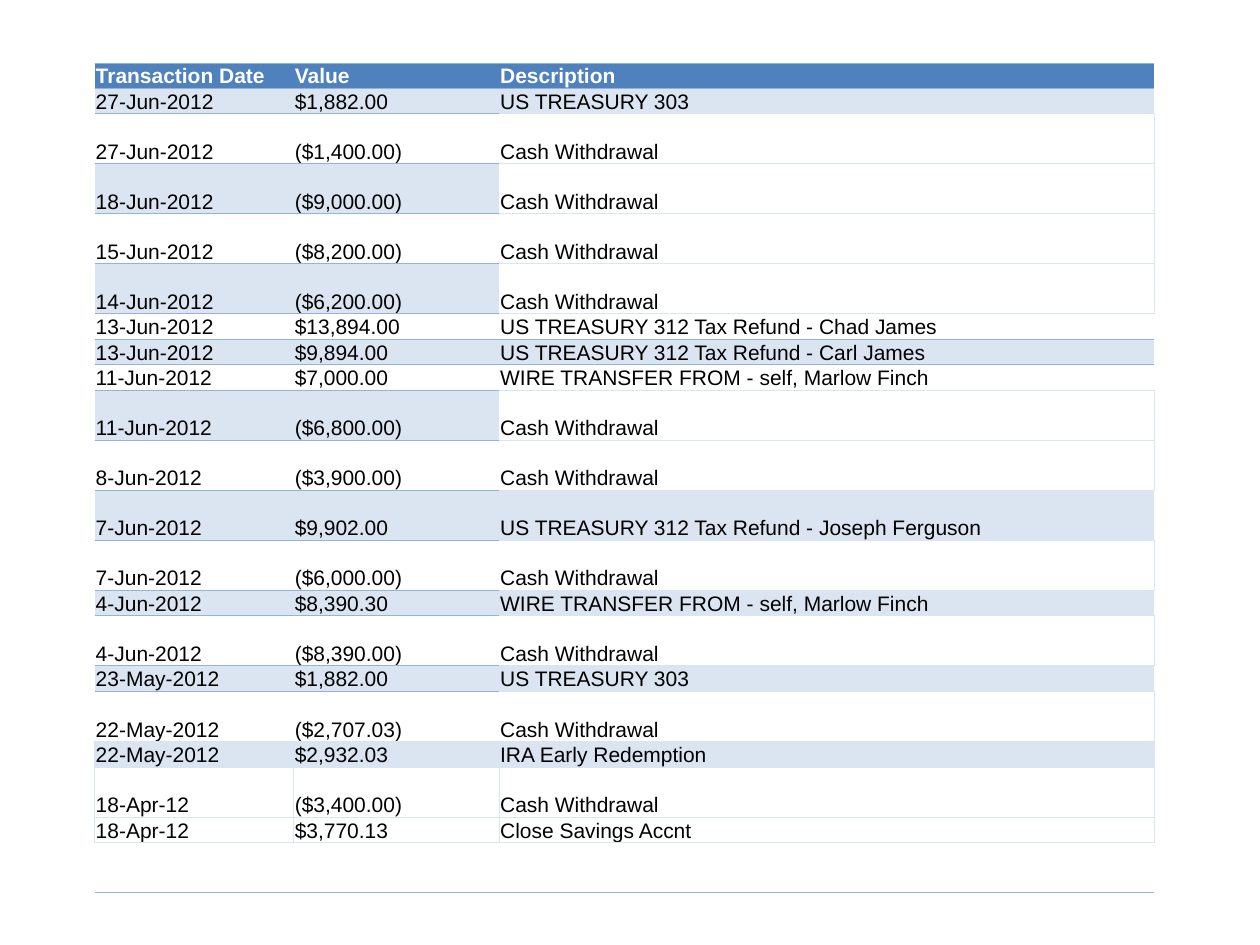
"""Build a slide with a ledger of dated bank transactions."""
import dataclasses
import typing

import lxml.etree
import pptx
import pptx.dml.color
import pptx.enum.text
import pptx.oxml.ns
import pptx.util


@dataclasses.dataclass(frozen=True)
class Theme:
    font: str = "Arial"
    text_size: float = 12
    border_width: float = 0.5
    header_fill: str = "4F81BD"
    header_text: str = "FFFFFF"
    body_text: str = "000000"
    band: str = "DBE5F1"
    plain: str = "FFFFFF"
    rule: str = "95B3D7"
    pale_rule: str = "DBE5F1"


@dataclasses.dataclass(frozen=True)
class Entry:
    date: str = ""
    value: str = ""
    description: str = ""
    height: float = 14.6
    boxed: bool = False
    banded: bool = False

    @property
    def texts(self) -> tuple[str, str, str]:
        return self.date, self.value, self.description

    @property
    def withdrawal(self) -> bool:
        return self.description == WITHDRAWAL


THEME = Theme()
SLIDE_WIDTH = pptx.util.Inches(10)
SLIDE_HEIGHT = pptx.util.Inches(7.5)
LEDGER_LEFT, LEDGER_TOP = 0.075, 0.067
COLUMN_SHARES = (0.158, 0.163, 0.52)
DESCRIPTION = 2
TALL = 28.6
WITHDRAWAL = "Cash Withdrawal"
WIRE = "WIRE TRANSFER FROM - self, Marlow Finch"
TREASURY = "US TREASURY 303"
REFUND = "US TREASURY 312 Tax Refund - "

HEADER = Entry("Transaction Date", "Value", "Description", height=13.7)
TRANSACTIONS = (
    ("27-Jun-2012", "$1,882.00", TREASURY),
    ("27-Jun-2012", "($1,400.00)", WITHDRAWAL),
    ("18-Jun-2012", "($9,000.00)", WITHDRAWAL),
    ("15-Jun-2012", "($8,200.00)", WITHDRAWAL),
    ("14-Jun-2012", "($6,200.00)", WITHDRAWAL),
    ("13-Jun-2012", "$13,894.00", REFUND + "Chad James"),
    ("13-Jun-2012", "$9,894.00", REFUND + "Carl James"),
    ("11-Jun-2012", "$7,000.00", WIRE),
    ("11-Jun-2012", "($6,800.00)", WITHDRAWAL),
    ("8-Jun-2012", "($3,900.00)", WITHDRAWAL),
    ("7-Jun-2012", "$9,902.00", REFUND + "Joseph Ferguson"),
    ("7-Jun-2012", "($6,000.00)", WITHDRAWAL),
    ("4-Jun-2012", "$8,390.30", WIRE),
    ("4-Jun-2012", "($8,390.00)", WITHDRAWAL),
    ("23-May-2012", "$1,882.00", TREASURY),
    ("22-May-2012", "($2,707.03)", WITHDRAWAL),
    ("22-May-2012", "$2,932.03", "IRA Early Redemption"),
    ("18-Apr-12", "($3,400.00)", WITHDRAWAL),
    ("18-Apr-12", "$3,770.13", "Close Savings Accnt"),
)
FIRST_BOXED = 17


def make_entries() -> list[Entry]:
    entries = [HEADER]
    for number, (date, value, description) in enumerate(TRANSACTIONS, start=1):
        tall = description == WITHDRAWAL or description.endswith("Ferguson")
        entries.append(Entry(
            date, value, description,
            height=TALL if tall else Entry.height,
            boxed=number >= FIRST_BOXED,
            banded=number % 2 == 1 and number < len(TRANSACTIONS),
        ))
    return entries + [Entry(height=TALL)]


def edge_color(above: typing.Optional[Entry], below: typing.Optional[Entry],
               column: int) -> str:
    neighbours = [entry for entry in (above, below) if entry]
    pale = any(entry.boxed or (column == DESCRIPTION and entry.withdrawal)
               for entry in neighbours)
    return THEME.pale_rule if pale else THEME.rule


def fill_color(entry: Entry, column: int) -> typing.Optional[str]:
    if entry is HEADER:
        return THEME.header_fill
    if column == DESCRIPTION and entry.withdrawal:
        return THEME.plain
    if entry.banded:
        return THEME.band
    return THEME.plain if entry.boxed else None


def draw_border(cell: typing.Any, side: str, color: typing.Optional[str]) -> None:
    qn = pptx.oxml.ns.qn
    line = lxml.etree.SubElement(cell._tc.get_or_add_tcPr(), qn(f"a:ln{side}"),
                                 w=str(pptx.util.Pt(THEME.border_width)))
    if color is None:
        lxml.etree.SubElement(line, qn("a:noFill"))
    else:
        solid = lxml.etree.SubElement(line, qn("a:solidFill"))
        lxml.etree.SubElement(solid, qn("a:srgbClr"), val=color)


def draw_fill(cell: typing.Any, color: typing.Optional[str]) -> None:
    if color is None:
        cell.fill.background()
    else:
        cell.fill.solid()
        cell.fill.fore_color.rgb = pptx.dml.color.RGBColor.from_string(color)


def write_text(cell: typing.Any, text: str, heading: bool) -> None:
    cell.vertical_anchor = pptx.enum.text.MSO_ANCHOR.BOTTOM
    cell.margin_left = cell.margin_right = cell.margin_top = pptx.util.Inches(0.01)
    cell.margin_bottom = 0
    if not text:
        return
    run = cell.text_frame.paragraphs[0].add_run()
    run.text = text
    run.font.name = THEME.font
    run.font.size = pptx.util.Pt(THEME.text_size)
    run.font.bold = heading
    run.font.color.rgb = pptx.dml.color.RGBColor.from_string(
        THEME.header_text if heading else THEME.body_text)


def draw_ledger(slide: typing.Any, entries: list[Entry]) -> None:
    ledger = slide.shapes.add_table(
        len(entries), len(COLUMN_SHARES),
        int(SLIDE_WIDTH * LEDGER_LEFT), int(SLIDE_HEIGHT * LEDGER_TOP),
        int(SLIDE_WIDTH * sum(COLUMN_SHARES)),
        pptx.util.Pt(sum(entry.height for entry in entries)),
    ).table
    ledger.horz_banding = False
    for column, share in enumerate(COLUMN_SHARES):
        ledger.columns[column].width = int(SLIDE_WIDTH * share)
    neighbours = zip([None] + entries[:-1], entries, entries[1:] + [None])
    for row, (above, entry, below) in enumerate(neighbours):
        ledger.rows[row].height = pptx.util.Pt(entry.height)
        for column, text in enumerate(entry.texts):
            cell = ledger.cell(row, column)
            side_color = THEME.pale_rule if entry.boxed else None
            closes_right = column == DESCRIPTION and entry.withdrawal
            draw_border(cell, "L", side_color)
            draw_border(cell, "R", THEME.pale_rule if closes_right else side_color)
            draw_border(cell, "T", edge_color(above, entry, column))
            draw_border(cell, "B", edge_color(entry, below, column))
            draw_fill(cell, fill_color(entry, column))
            write_text(cell, text, entry is HEADER)


def main() -> None:
    deck = pptx.Presentation()
    deck.slide_width, deck.slide_height = SLIDE_WIDTH, SLIDE_HEIGHT
    slide = deck.slides.add_slide(deck.slide_layouts.get_by_name("Blank"))
    draw_ledger(slide, make_entries())
    deck.save("out.pptx")


if __name__ == "__main__":
    main()
